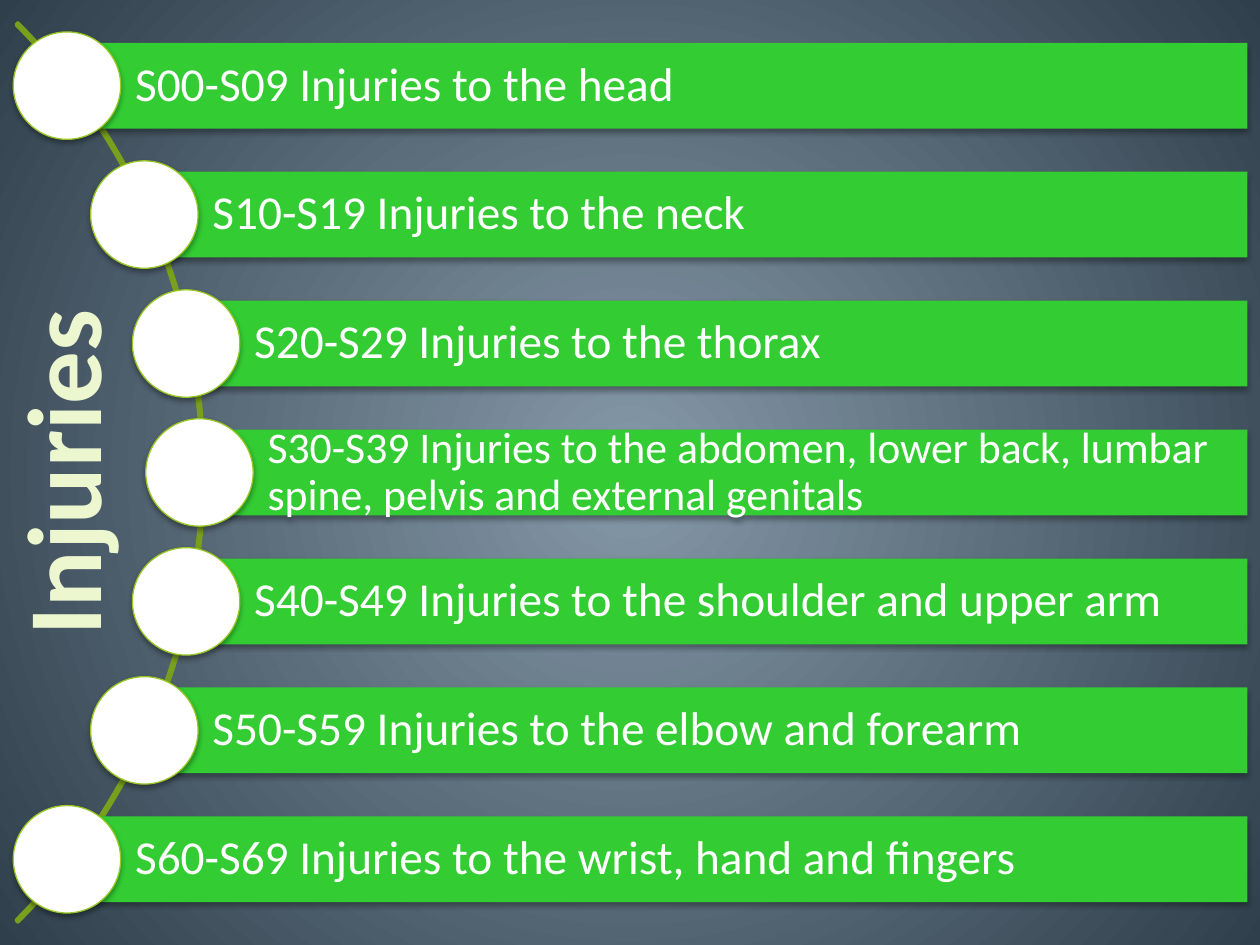
import math

from pptx import Presentation, oxml
from pptx import util as u
from pptx.dml.color import RGBColor
from pptx.enum import shapes, text
from pptx.oxml import ns

WHITE = RGBColor(0xFF, 0xFF, 0xFF)
GREEN = RGBColor(0x33, 0xCC, 0x33)
LIME = RGBColor(0x98, 0xC7, 0x23)
OLIVE = RGBColor(0x7A, 0x9F, 0x1C)
CREAM = RGBColor(0xEC, 0xF7, 0xD0)
SLATE_LIGHT = RGBColor(0x86, 0x99, 0xA9)
SLATE_DARK = RGBColor(0x2F, 0x3F, 0x4B)

CENTER_X, CENTER_Y = -246.6, 270
ARC_SIZE = 726.5
DOT_RADIUS = 360.6
ROW_PITCH = 73.68
BAR_HEIGHT = 49
BAR_RIGHT = 712.8
DOT_SIZE = 61.4

INJURIES = [
    ("S00-S09 Injuries to the head", 27),
    ("S10-S19 Injuries to the neck", 27),
    ("S20-S29 Injuries to the thorax", 27),
    ("S30-S39 Injuries to the abdomen, lower back, lumbar spine, "
     "pelvis and external genitals", 25),
    ("S40-S49 Injuries to the shoulder and upper arm", 27),
    ("S50-S59 Injuries to the elbow and forearm", 27),
    ("S60-S69 Injuries to the wrist, hand and fingers", 27),
]

SHADOW = (
    f'<a:outerShdw {ns.nsdecls("a")} blurRad="40000" dist="23000" '
    'dir="5400000" rotWithShape="0"><a:srgbClr val="000000">'
    '<a:alpha val="35000"/></a:srgbClr></a:outerShdw>'
)
RADIAL = (
    f'<a:path {ns.nsdecls("a")} path="circle">'
    '<a:fillToRect l="50000" t="50000" r="50000" b="50000"/></a:path>'
)


class Deck:
    font = "Calibri"

    def __init__(self, slide):
        self.s = slide

    def background(self, inner, outer):
        fill = self.s.background.fill
        fill.gradient()
        for stop, color in zip(fill.gradient_stops, (inner, outer)):
            stop.color.rgb = color
        lin = self.s.element.find(".//" + ns.qn("a:lin"))
        lin.getparent().replace(lin, oxml.parse_xml(RADIAL))

    def shape(self, kind, x, y, w, h, fill=None, line=None, width=0.75, shadow=True):
        sp = self.s.shapes.add_shape(kind, u.Pt(x), u.Pt(y), u.Pt(w), u.Pt(h))
        if fill is None:
            sp.fill.background()
        else:
            sp.fill.solid()
            sp.fill.fore_color.rgb = fill
        if line is None:
            sp.line.fill.background()
        else:
            sp.line.color.rgb = line
            sp.line.width = u.Pt(width)
        sp.shadow.inherit = False
        if shadow:
            effects = sp.element.find(".//" + ns.qn("a:effectLst"))
            effects.append(oxml.parse_xml(SHADOW))
        return sp

    def label(self, sp, words, size, color, align, bold=False):
        tf = sp.text_frame
        tf.word_wrap = True
        p = tf.paragraphs[0]
        p.text = words
        p.alignment = align
        p.font.name = self.font
        p.font.size = u.Pt(size)
        p.font.bold = bold
        p.font.color.rgb = color
        return tf

    def arc(self, cx, cy, size):
        sp = self.shape(shapes.MSO_SHAPE.BLOCK_ARC, cx - size / 2, cy - size / 2,
                        size, size, line=OLIVE, width=2, shadow=False)
        for i, value in enumerate((189, 27, 0.002)):
            sp.adjustments[i] = value

    def bar(self, x, cy, words, size):
        sp = self.shape(shapes.MSO_SHAPE.RECTANGLE, x, cy - BAR_HEIGHT / 2,
                        BAR_RIGHT - x, BAR_HEIGHT, fill=GREEN)
        tf = self.label(sp, words, size, WHITE, text.PP_ALIGN.LEFT)
        tf.vertical_anchor = text.MSO_ANCHOR.MIDDLE
        tf.margin_left = u.Pt(38.9)
        tf.margin_top = tf.margin_right = tf.margin_bottom = u.Pt(5)
        tf.paragraphs[0].line_spacing = 0.9

    def dot(self, cx, cy):
        self.shape(shapes.MSO_SHAPE.OVAL, cx - DOT_SIZE / 2, cy - DOT_SIZE / 2,
                   DOT_SIZE, DOT_SIZE, fill=WHITE, line=LIME)

    def vertical_title(self, words, x, y, w, h):
        sp = self.s.shapes.add_textbox(u.Pt(x), u.Pt(y), u.Pt(w), u.Pt(h))
        self.label(sp, words, 60, CREAM, text.PP_ALIGN.CENTER, bold=True)
        sp.element.find(".//" + ns.qn("a:bodyPr")).set("vert", "vert270")


def main():
    prs = Presentation()
    prs.slide_width, prs.slide_height = u.Pt(720), u.Pt(540)
    deck = Deck(prs.slides.add_slide(prs.slide_layouts[6]))
    deck.background(SLATE_LIGHT, SLATE_DARK)
    deck.arc(CENTER_X, CENTER_Y, ARC_SIZE)
    for i, (words, size) in enumerate(INJURIES):
        offset = (i - len(INJURIES) // 2) * ROW_PITCH
        x = CENTER_X + math.sqrt(DOT_RADIUS ** 2 - offset ** 2)
        deck.bar(x, CENTER_Y + offset, words, size)
        deck.dot(x, CENTER_Y + offset)
    deck.vertical_title("Injuries", -5.8, 36, 87.1, 468)
    prs.save("out.pptx")


if __name__ == "__main__":
    main()
